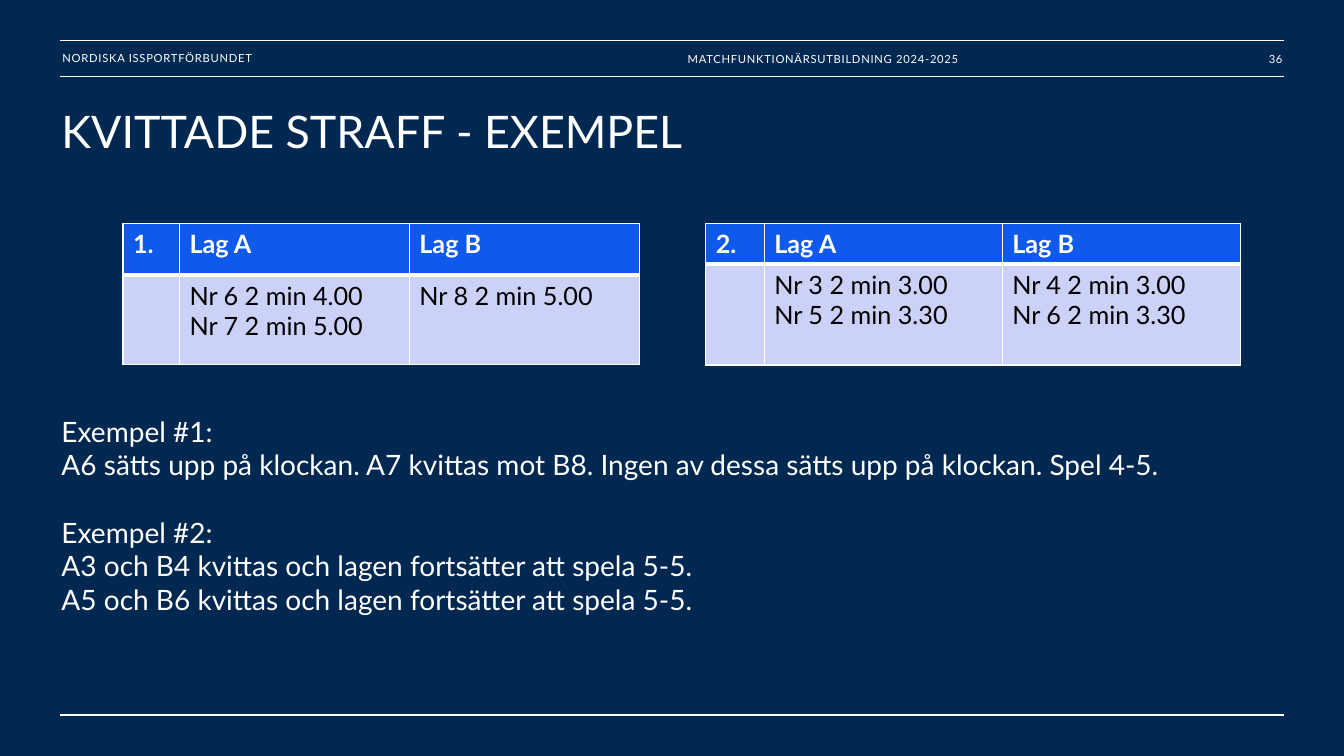
from pptx import Presentation
from pptx.dml.color import RGBColor
from pptx.enum import shapes, text
from pptx.oxml import parse_xml
from pptx.oxml.ns import nsdecls
from pptx.util import Inches, Pt

FONT = "Lato"
WHITE, BLACK, NAVY = "FFFFFF", "000000", "002850"
HEADER_BLUE, CELL_LILAC = "0F59EB", "CCD1F7"
LEFT, RIGHT = 0.6, 12.73


def color(value):
    """Turn a hex string into a colour."""
    return RGBColor.from_string(value)


def style_text(frame, size, ink, bold=False, spacing=0):
    """Format every run in a text frame."""
    for para in frame.paragraphs:
        for span in para.runs:
            span.font.name = FONT
            span.font.size = Pt(size)
            span.font.bold = bold
            span.font.color.rgb = color(ink)
            if spacing:
                span.font._element.set("spc", str(spacing))


def add_rule(page, y, width):
    """Draw a white line across the page."""
    line = page.shapes.add_connector(
        shapes.MSO_CONNECTOR.STRAIGHT, Inches(LEFT), Inches(y), Inches(RIGHT), Inches(y))
    line.line.color.rgb = color(WHITE)
    line.line.width = Pt(width)
    line._element.spPr.append(parse_xml(f"<a:effectLst {nsdecls('a')}/>"))


def add_text(page, words, place, size, spacing=0, inset_top=0):
    """Add a wrapped white text box and return its frame."""
    box = page.shapes.add_textbox(*(Inches(length) for length in place))
    frame = box.text_frame
    frame.word_wrap = True
    frame.margin_left = frame.margin_right = frame.margin_bottom = 0
    frame.margin_top = Inches(inset_top)
    frame.text = words
    style_text(frame, size, WHITE, spacing=spacing)
    return frame


def add_header(page, words, place, align, inset_top=0.04):
    """Add one small spaced text in the header band."""
    frame = add_text(page, words, place, 8, spacing=50, inset_top=inset_top)
    frame.vertical_anchor = text.MSO_ANCHOR.MIDDLE
    frame.paragraphs[0].alignment = align


def style_cell(cell, is_header):
    """Give a cell its borders, fill and font."""
    properties = cell._tc.get_or_add_tcPr()
    for side in "LRTB":
        thick = (is_header and side == "B") or (not is_header and side == "T")
        properties.append(parse_xml(
            f'<a:ln{side} {nsdecls("a")} w="{Pt(3 if thick else 1)}">'
            f'<a:solidFill><a:srgbClr val="{WHITE}"/></a:solidFill></a:ln{side}>'))
    cell.fill.solid()
    cell.fill.fore_color.rgb = color(HEADER_BLUE if is_header else CELL_LILAC)
    style_text(cell.text_frame, 18, WHITE if is_header else BLACK, bold=is_header)


def add_penalty_table(page, left, columns, rows, content):
    """Add a table of the penalties of both teams."""
    table = page.shapes.add_table(
        len(rows), len(columns), Inches(left), Inches(2.22),
        Inches(sum(columns)), Inches(sum(rows))).table
    table.horz_banding = False
    for column, width in zip(table.columns, columns):
        column.width = Inches(width)
    for row, height, entries in zip(table.rows, rows, content):
        row.height = Inches(height)
        for cell, entry in zip(row.cells, entries):
            cell.text = entry
            style_cell(cell, entries is content[0])


def main():
    """Build the slide and save it."""
    deck = Presentation()
    deck.slide_width, deck.slide_height = Inches(13.33), Inches(7.5)
    page = deck.slides.add_slide(deck.slide_layouts[6])
    page.background.fill.solid()
    page.background.fill.fore_color.rgb = color(NAVY)

    for y, width in ((0.4, 1), (0.76, 1), (7.09, 1.5)):
        add_rule(page, y, width)
    left, right = text.PP_ALIGN.LEFT, text.PP_ALIGN.RIGHT
    add_header(page, "NORDISKA ISSPORTFÖRBUNDET", (0.62, 0.4, 3.36, 0.35), left, 0)
    add_header(page, "MATCHFUNKTIONÄRSUTBILDNING 2024-2025", (6.82, 0.4, 3.82, 0.34), left)
    add_header(page, "36", (11.83, 0.4, 0.89, 0.34), right)

    add_text(page, "KVITTADE STRAFF - EXEMPEL", (0.61, 1.03, 12.12, 0.6), 32)
    add_penalty_table(page, 1.22, (0.56, 2.28, 2.28), (0.51, 0.89), (
        ("1.", "Lag A", "Lag B"),
        ("", "Nr 6 2 min 4.00\nNr 7 2 min 5.00", "Nr 8 2 min 5.00")))
    add_penalty_table(page, 7, (0.58, 2.36, 2.36), (0.4, 1), (
        ("2.", "Lag A", "Lag B"),
        ("", "Nr 3 2 min 3.00\nNr 5 2 min 3.30", "Nr 4 2 min 3.00\nNr 6 2 min 3.30")))

    examples = add_text(page, "\n".join((
        "Exempel #1:",
        "A6 sätts upp på klockan. A7 kvittas mot B8. "
        "Ingen av dessa sätts upp på klockan. Spel 4-5.",
        "Exempel #2:",
        "A3 och B4 kvittas och lagen fortsätter att spela 5-5.",
        "A5 och B6 kvittas och lagen fortsätter att spela 5-5.",
    )), (0.61, 4.11, 12.12, 2.1), 20)
    examples.paragraphs[2].space_before = Pt(24)

    deck.save("out.pptx")


if __name__ == "__main__":
    main()
